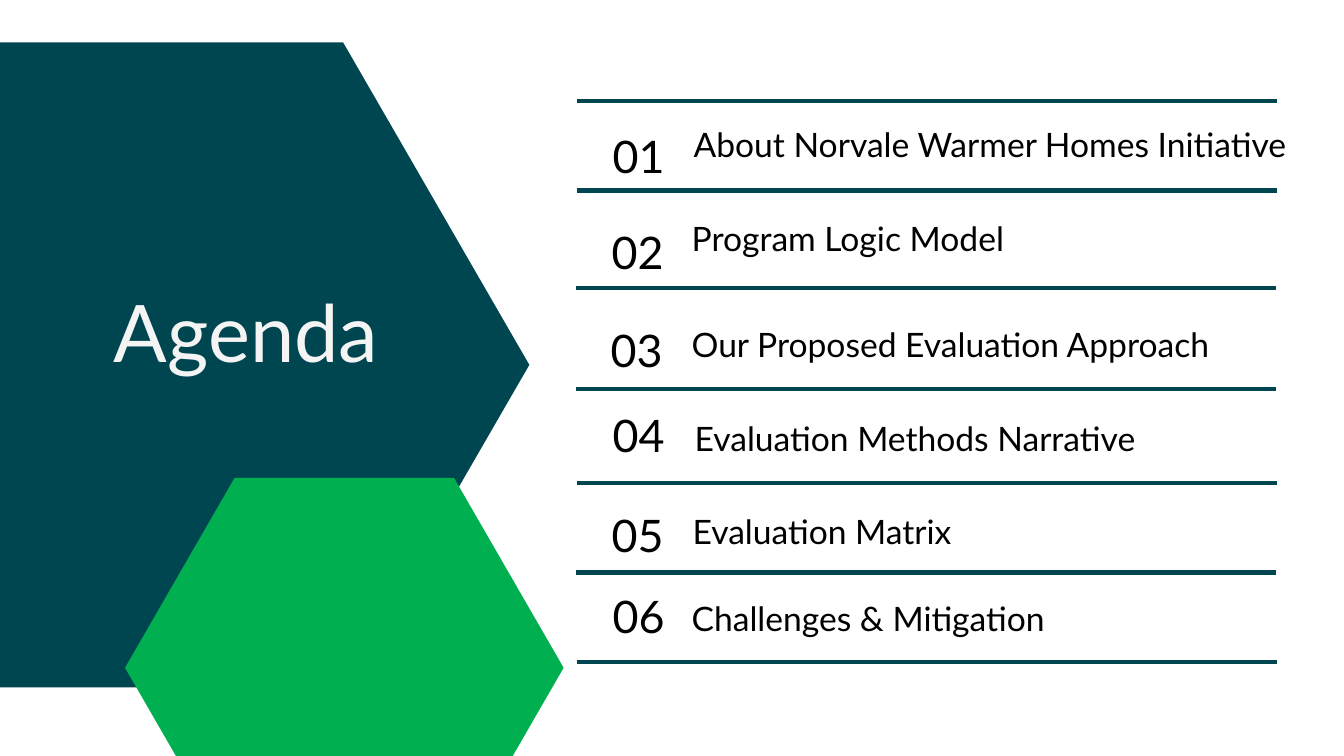
from lxml.etree import SubElement
from pptx import Presentation
from pptx.dml.color import RGBColor
from pptx.enum.shapes import MSO_CONNECTOR
from pptx.enum.text import MSO_ANCHOR, MSO_AUTO_SIZE, PP_ALIGN
from pptx.oxml.ns import qn
from pptx.util import Inches, Pt

FONT = "Lato"
TEAL, GREEN, OFF_WHITE, BLACK = "004651", "00B050", "F4F4F4", "000000"
RULE_WIDTH = 6.95
NUMBER_SPACING, TOPIC_SPACING = 56.9, 46.8

# left and top of each rule
RULES = [(5.72, 1), (5.72, 1.89), (5.71, 2.86), (5.71, 3.86),
         (5.72, 4.79), (5.71, 5.68), (5.72, 6.57)]

# number left and top, topic box, topic line spacing, topic
AGENDA = [
    ((5.78, 1.02), (6.88, 1.23, 5.89, 0.4), None, "About Norvale Warmer Homes Initiative"),
    ((5.77, 1.97), (6.86, 2.16, 5.89, 0.4), None, "Program Logic Model"),
    ((5.76, 2.94), (6.86, 2.96, 5.8, 0.59), TOPIC_SPACING, "Our Proposed Evaluation Approach"),
    ((5.78, 3.79), (6.89, 3.9, 5.79, 0.59), TOPIC_SPACING, "Evaluation Methods Narrative"),
    ((5.77, 4.78), (6.87, 4.82, 5.8, 0.59), TOPIC_SPACING, "Evaluation Matrix"),
    ((5.78, 5.58), (6.86, 5.68, 5.89, 0.58), TOPIC_SPACING, "Challenges & Mitigation"),
]


def color(hex_value):
    return RGBColor.from_string(hex_value)


def add_hexagon(slide, left, top, width, height, fill):
    right, bottom, middle = left + width, top + height, top + height / 2
    inner_left, inner_right = left + width / 4, right - width / 4
    corners = [(right, middle), (inner_right, bottom), (inner_left, bottom),
               (left, middle), (inner_left, top), (inner_right, top)]
    start, *rest = [(Inches(x), Inches(y)) for x, y in corners]
    builder = slide.shapes.build_freeform(*start, scale=1.0)
    builder.add_line_segments(rest, close=True)
    hexagon = builder.convert_to_shape()
    hexagon.fill.solid()
    hexagon.fill.fore_color.rgb = color(fill)
    hexagon.line.fill.background()
    hexagon.shadow.inherit = False


def add_rule(slide, left, top):
    rule = slide.shapes.add_connector(
        MSO_CONNECTOR.STRAIGHT, Inches(left), Inches(top),
        Inches(left + RULE_WIDTH), Inches(top))
    rule.line.color.rgb = color(TEAL)
    rule.line.width = Pt(3)
    SubElement(rule.element.spPr, qn("a:effectLst"))


def write_text(shape, text, size, font_color, spacing=None, align=PP_ALIGN.LEFT):
    frame = shape.text_frame
    frame.text = text
    frame.word_wrap = True
    frame.auto_size = MSO_AUTO_SIZE.SHAPE_TO_FIT_TEXT
    frame.vertical_anchor = MSO_ANCHOR.TOP
    frame.margin_left = frame.margin_top = frame.margin_right = frame.margin_bottom = 0
    paragraph = frame.paragraphs[0]
    paragraph.alignment = align
    if spacing:
        paragraph.line_spacing = Pt(spacing)
    font = paragraph.runs[0].font
    font.name = FONT
    font.size = Pt(size)
    font.color.rgb = color(font_color)


def place_title(slide, text):
    """Fill the title placeholder and bring it in front of the hexagons."""
    title = slide.shapes.title
    title.left, title.top = Inches(1.13), Inches(2.81)
    title.width, title.height = Inches(3.25), Inches(0.92)
    write_text(title, text, 56.7, OFF_WHITE, spacing=68)
    title.element.getparent().append(title.element)


def add_text(slide, box, *text_format, **options):
    write_text(slide.shapes.add_textbox(*map(Inches, box)), *text_format, **options)


def main():
    deck = Presentation()
    deck.slide_width, deck.slide_height = Inches(13.33), Inches(7.5)
    slide = deck.slides.add_slide(deck.slide_layouts[5])

    add_hexagon(slide, -2.14, 0.42, 7.39, 6.4, TEAL)
    add_hexagon(slide, 1.24, 4.74, 4.35, 3.77, GREEN)
    place_title(slide, "Agenda")

    for left, top in RULES:
        add_rule(slide, left, top)
    for number, (number_corner, topic_box, spacing, topic) in enumerate(AGENDA, 1):
        add_text(slide, (*number_corner, 1.11, 0.72), f"{number:02}", 32, BLACK,
                 spacing=NUMBER_SPACING, align=PP_ALIGN.CENTER)
        add_text(slide, topic_box, topic, 24, BLACK, spacing=spacing)

    deck.save("out.pptx")


if __name__ == "__main__":
    main()
